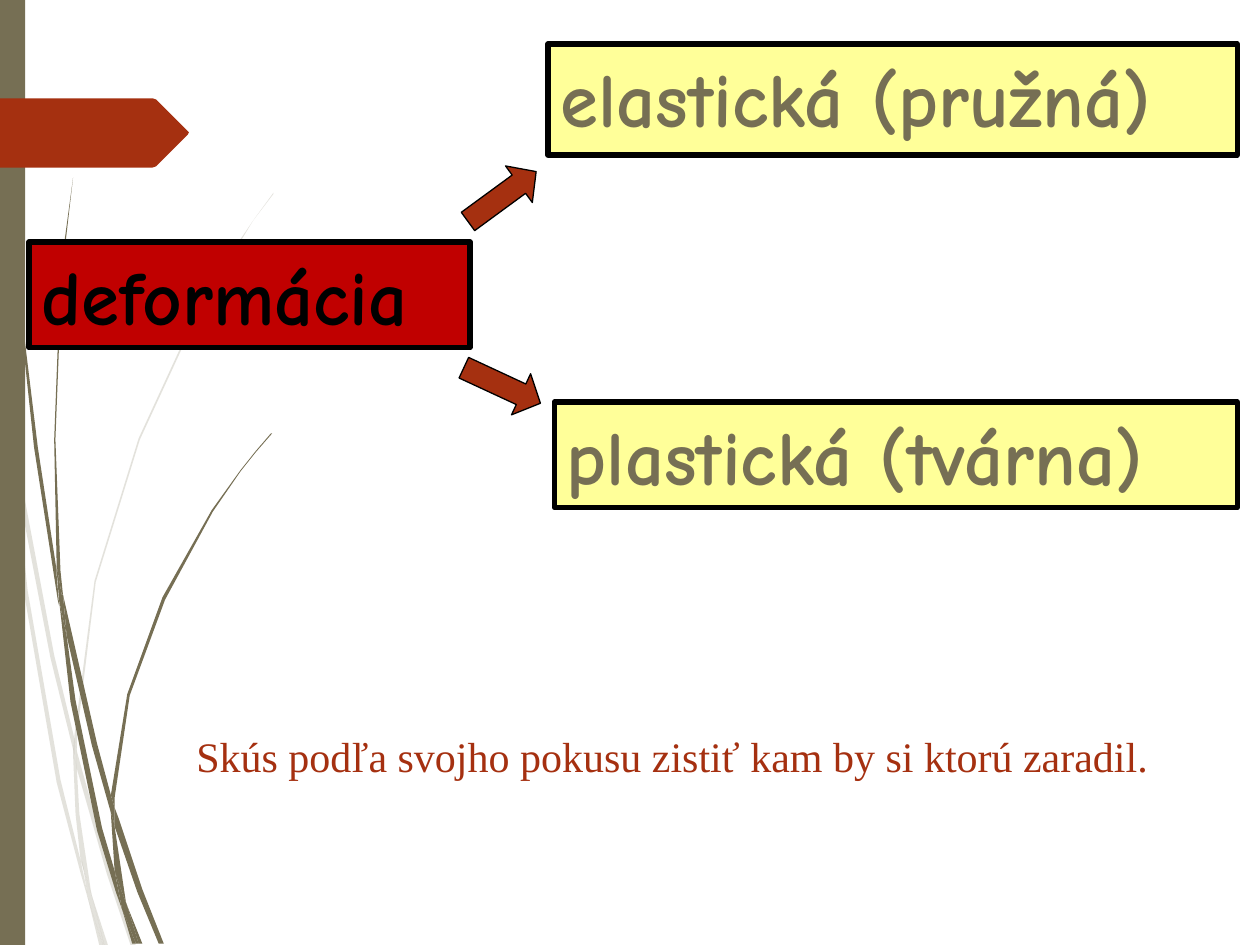
from dataclasses import dataclass

from lxml.etree import SubElement
from pptx import Presentation
from pptx.dml.color import RGBColor
from pptx.enum.shapes import MSO_SHAPE
from pptx.enum.text import MSO_ANCHOR, PP_ALIGN
from pptx.oxml.ns import qn
from pptx.util import Inches, Pt

Point = tuple[float, float]


@dataclass(frozen=True)
class Theme:
    olive: str = "766F54"
    rust: str = "A53010"
    red: str = "C00000"
    yellow: str = "FFFF99"
    black: str = "000000"
    term_font: str = "Comic Neue"
    task_font: str = "Times New Roman"
    term_size: int = 44
    task_size: int = 24
    frame_width: float = 3
    arrow_line_width: float = 0.75
    pale_opacity: int = 20


@dataclass(frozen=True)
class Term:
    text: str
    left: float
    top: float
    width: float
    height: float
    fill: str
    color: str


@dataclass(frozen=True)
class Arrow:
    top: float
    rotation: float


THEME = Theme()

TERMS = [
    Term("deformácia", 0.23, 1.92, 3.5, 0.84, THEME.red, THEME.black),
    Term("elastická (pružná)", 4.35, 0.35, 5.47, 0.88, THEME.yellow, THEME.olive),
    Term("plastická (tvárna)", 4.4, 3.19, 5.42, 0.84, THEME.yellow, THEME.olive),
]
ARROWS = [Arrow(1.38, 323.8), Arrow(2.88, 24.9)]

PALE_GRASS: list[list[Point]] = [
    [(0.08, 3.5), (0.06, 3.22), (0, 2.82), (0, 2.99), (0.07, 3.44)],
    [(0.4, 5.22), (0.59, 5.99), (0.59, 5.86), (0.43, 5.2), (0.1, 3.45), (0.12, 3.76)],
    [(0.64, 6.07), (0.61, 5.96), (0.61, 6.1), (0.85, 6.94), (1.04, 7.51), (1.08, 7.51),
     (0.88, 6.92)],
    [(0.83, 7.51), (0.86, 7.51), (0.73, 7.11)],
    [(0.64, 6.83), (0.48, 6.19), (0.22, 4.69), (0.12, 3.76), (0.08, 3.5), (0.19, 4.7),
     (0.45, 6.21), (0.64, 6.93), (0.7, 7.14), (0.69, 7.07)],
    [(0.58, 5.99), (0.6, 6.46), (0.64, 6.83), (0.67, 6.92), (0.73, 7.11), (0.72, 7.06),
     (0.63, 6.46), (0.61, 6.1), (0.61, 6.08)],
    [(0.61, 5.84), (0.76, 4.62), (1.11, 3.49), (1.59, 2.45), (1.87, 1.98), (2.01, 1.75),
     (2.17, 1.54), (2.17, 1.53), (2.01, 1.75), (1.86, 1.97), (1.58, 2.44), (1.1, 3.48),
     (0.75, 4.61), (0.59, 5.84), (0.59, 5.86), (0.61, 5.96)],
    [(0.7, 7.14), (0.79, 7.51), (0.82, 7.51)],
    [(0.61, 6.08), (0.61, 6.1), (0.61, 5.96), (0.59, 5.86), (0.58, 5.99)],
    [(0.67, 6.92), (0.65, 6.83), (0.69, 7.07), (0.7, 7.14), (0.82, 7.51), (0.83, 7.51),
     (0.73, 7.11)],
]
DARK_GRASS: list[list[Point]] = [
    [(0.05, 1.1), (0.14, 2.33), (0.27, 3.55), (0.46, 4.77), (0.47, 4.81), (0.45, 4.57),
     (0.45, 4.53), (0.3, 3.55), (0.15, 2.32), (0.06, 1.09), (0.04, 0.48), (0.03, 0),
     (0.02, 0), (0.03, 0.48)],
    [(0.73, 5.92), (0.88, 6.45), (0.88, 6.33), (0.88, 6.31), (0.77, 5.9), (0.5, 4.72),
     (0.53, 5.05)],
    [(0.94, 6.49), (0.91, 6.41), (0.91, 6.56), (1.09, 7.08), (1.26, 7.49), (1.3, 7.49),
     (1.13, 7.06)],
    [(0.91, 6.91), (0.81, 6.57), (0.6, 5.56), (0.53, 5.05), (0.47, 4.77), (0.56, 5.57),
     (0.77, 6.59), (0.92, 7.08), (0.97, 7.22), (0.96, 7.17)],
    [(0.5, 4.72), (0.48, 4.53), (0.44, 3.49), (0.48, 2.45), (0.52, 1.93), (0.58, 1.41),
     (0.51, 1.93), (0.47, 2.45), (0.43, 3.49), (0.45, 4.49), (0.49, 4.72)],
    [(1.1, 7.49), (1.13, 7.49), (1.01, 7.19)],
    [(0.47, 4.77), (0.53, 5.05), (0.5, 4.72), (0.49, 4.72), (0.45, 4.49), (0.45, 4.53)],
    [(0.91, 6.33), (1.03, 5.52), (1.31, 4.76), (1.69, 4.06), (1.91, 3.74), (2.03, 3.59),
     (2.16, 3.44), (2.15, 3.44), (2.03, 3.58), (1.91, 3.73), (1.68, 4.05), (1.29, 4.74),
     (1.01, 5.51), (0.88, 6.31), (0.91, 6.41)],
    [(0.97, 7.22), (1.05, 7.49), (1.08, 7.49)],
    [(0.88, 6.45), (0.91, 6.91), (0.96, 7.06), (1.01, 7.19), (1, 7.16), (0.91, 6.56),
     (0.9, 6.51)],
    [(0.88, 6.45), (0.9, 6.51), (0.91, 6.56), (0.91, 6.41), (0.88, 6.31), (0.88, 6.33)],
    [(0.96, 7.06), (0.91, 6.91), (0.96, 7.17), (0.97, 7.22), (1.08, 7.49), (1.1, 7.49),
     (1.01, 7.19)],
]
TAG: list[Point] = [
    (0, 0.78), (1.21, 0.78), (1.24, 0.79), (1.49, 1.04), (1.5, 1.05), (1.49, 1.07),
    (1.24, 1.32), (1.21, 1.33), (0, 1.33),
]


def paint(shape, fill: str, line_width: float = 0, opacity: int = 100) -> None:
    """Give a shape a flat fill, and a black outline if a width is set."""
    shape.shadow.inherit = False
    shape.fill.solid()
    shape.fill.fore_color.rgb = RGBColor.from_string(fill)
    if opacity < 100:
        color = shape.fill._xPr.find(qn("a:solidFill"))[0]
        SubElement(color, qn("a:alpha"), val=str(opacity * 1000))
    if line_width:
        shape.line.color.rgb = RGBColor.from_string(THEME.black)
        shape.line.width = Pt(line_width)
    else:
        shape.line.fill.background()


def add_outline(shapes, points: list[Point], fill: str, opacity: int = 100) -> None:
    start, *others = [(Inches(x), Inches(y)) for x, y in points]
    builder = shapes.build_freeform(*start)
    builder.add_line_segments(others, close=True)
    paint(builder.convert_to_shape(), fill, opacity=opacity)


def add_grass(slide, blades: list[list[Point]], opacity: int) -> None:
    tuft = slide.shapes.add_group_shape()
    for blade in blades:
        add_outline(tuft.shapes, blade, THEME.olive, opacity)


def write(shape, text: str, *, font: str, size: int, color: str, bold: bool = False) -> None:
    frame = shape.text_frame
    frame.word_wrap = True
    frame.vertical_anchor = MSO_ANCHOR.TOP
    paragraph = frame.paragraphs[0]
    paragraph.alignment = PP_ALIGN.LEFT
    run = paragraph.add_run()
    run.text = text
    run.font.name = font
    run.font.size = Pt(size)
    run.font.bold = bold
    run.font.color.rgb = RGBColor.from_string(color)


def add_term(slide, term: Term) -> None:
    box = slide.shapes.add_shape(
        MSO_SHAPE.RECTANGLE,
        Inches(term.left), Inches(term.top), Inches(term.width), Inches(term.height))
    paint(box, term.fill, THEME.frame_width)
    write(box, term.text, font=THEME.term_font, size=THEME.term_size,
          color=term.color, bold=True)


def add_arrow(slide, arrow: Arrow) -> None:
    pointer = slide.shapes.add_shape(
        MSO_SHAPE.RIGHT_ARROW, Inches(3.65), Inches(arrow.top), Inches(0.67), Inches(0.36))
    pointer.adjustments[0] = 0.5
    pointer.adjustments[1] = 0.47
    pointer.rotation = arrow.rotation
    paint(pointer, THEME.rust, THEME.arrow_line_width)


def main() -> None:
    deck = Presentation()
    deck.slide_width, deck.slide_height = Inches(10), Inches(7.5)
    slide = deck.slides.add_slide(deck.slide_layouts[6])

    add_grass(slide, PALE_GRASS, THEME.pale_opacity)
    add_grass(slide, DARK_GRASS, 100)
    side_band = slide.shapes.add_shape(
        MSO_SHAPE.RECTANGLE, 0, 0, Inches(0.2), deck.slide_height)
    paint(side_band, THEME.olive)
    add_outline(slide.shapes, TAG, THEME.rust)

    for term in TERMS:
        add_term(slide, term)
    for arrow in ARROWS:
        add_arrow(slide, arrow)

    task = slide.shapes.add_textbox(Inches(1.46), Inches(5.75), Inches(7.83), Inches(0.51))
    write(task, "Skús podľa svojho pokusu zistiť kam by si ktorú zaradil.",
          font=THEME.task_font, size=THEME.task_size, color=THEME.rust)
    deck.save("out.pptx")


if __name__ == "__main__":
    main()
